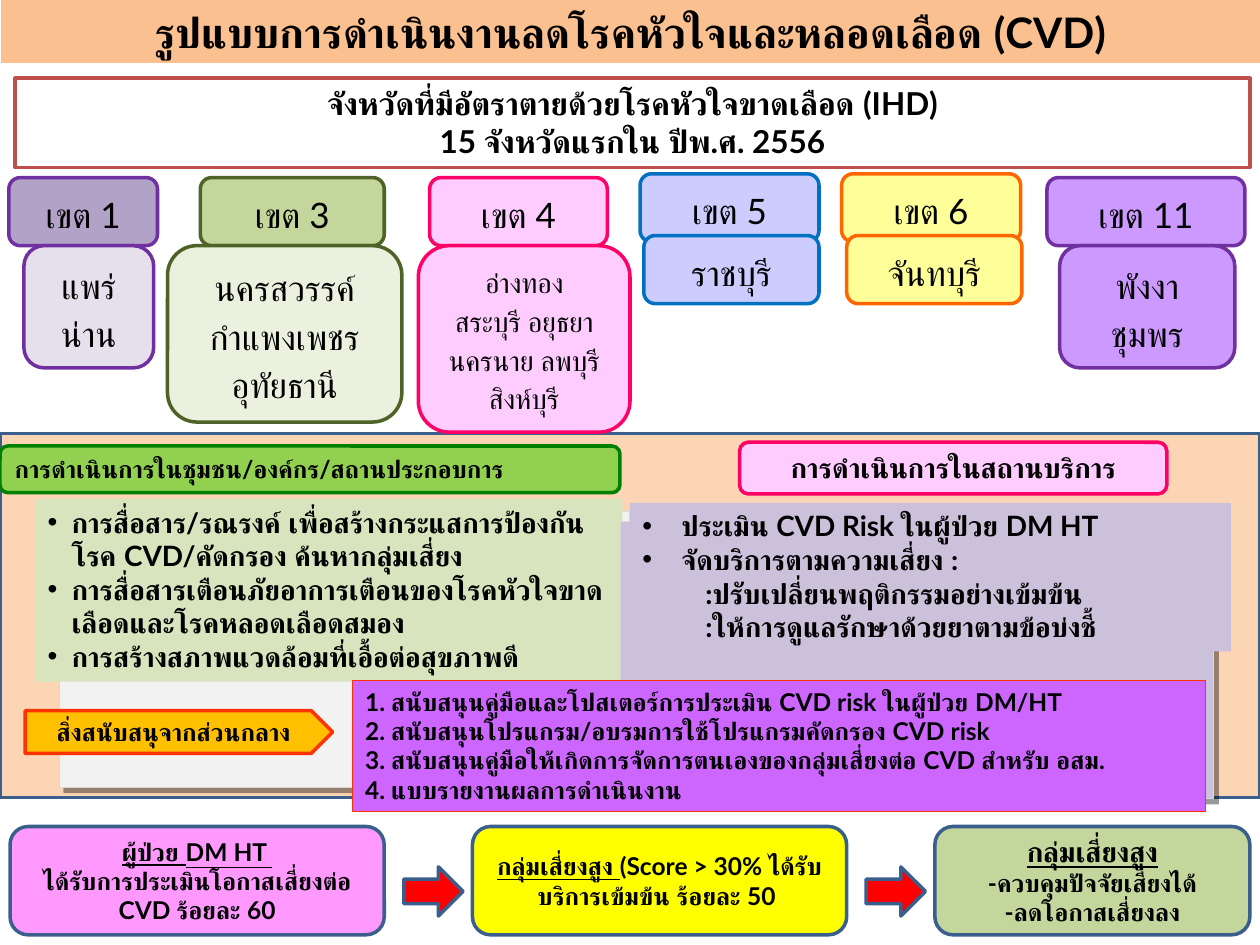
from lxml.etree import SubElement
from pptx import Presentation
from pptx.dml.color import RGBColor
from pptx.enum.shapes import MSO_SHAPE
from pptx.enum.text import MSO_ANCHOR, MSO_AUTO_SIZE, PP_ALIGN
from pptx.oxml.ns import qn
from pptx.util import Inches, Pt

COLUMNS, ROWS = 100, 75
BLACK, NAVY, GREY = "000000", "3A5F8C", "D9D9D9"
UNDERLINED = {"underline": True}


def color(value):
    return RGBColor.from_string(value)


class SlideBuilder:
    font_name = "Lato"

    def __init__(self, presentation):
        self.slide = presentation.slides.add_slide(presentation.slide_layouts[6])
        self.column = presentation.slide_width / COLUMNS
        self.row = presentation.slide_height / ROWS

    def box(self, place, fill, line=None, weight=2, kind=MSO_SHAPE.RECTANGLE):
        left, top, width, height = place
        shape = self.slide.shapes.add_shape(
            kind, round(left * self.column), round(top * self.row),
            round(width * self.column), round(height * self.row))
        shape.shadow.inherit = False
        shape.fill.solid()
        shape.fill.fore_color.rgb = color(fill)
        if line:
            shape.line.color.rgb = color(line)
            shape.line.width = Pt(weight)
        else:
            shape.line.fill.background()
        return shape

    def rounded(self, place, fill, line):
        return self.box(place, fill, line, kind=MSO_SHAPE.ROUNDED_RECTANGLE)

    def panel(self, place, fill):
        shape = self.box(place, fill, GREY, 0.75)
        effects = shape._element.spPr.find(qn("a:effectLst"))
        shadow = SubElement(effects, qn("a:outerShdw"), blurRad="0", dist=str(Pt(4)),
                            dir="2700000", algn="tl", rotWithShape="0")
        shade = SubElement(shadow, qn("a:srgbClr"), val=BLACK)
        SubElement(shade, qn("a:alpha"), val="40000")

    def text(self, shape, paragraphs, size, bold=True, align=PP_ALIGN.CENTER,
             spacing=None, grow=True):
        frame = shape.text_frame
        settings = {
            "word_wrap": True,
            "vertical_anchor": MSO_ANCHOR.TOP if grow else MSO_ANCHOR.MIDDLE,
            "auto_size": MSO_AUTO_SIZE.SHAPE_TO_FIT_TEXT if grow else MSO_AUTO_SIZE.NONE,
        }
        for name, value in settings.items():
            setattr(frame, name, value)
        for index, runs in enumerate(paragraphs):
            paragraph = frame.add_paragraph() if index else frame.paragraphs[0]
            paragraph.alignment = align
            if spacing:
                paragraph.line_spacing = spacing
            for words, changes in [(runs, {})] if isinstance(runs, str) else runs:
                run = paragraph.add_run()
                run.text = words
                run.font.color.rgb = color(BLACK)
                style = {"name": self.font_name, "size": Pt(size), "bold": bold, **changes}
                for name, value in style.items():
                    setattr(run.font, name, value)

    def bullets(self, shape, items, hang, details=()):
        self.text(shape, [*items, *details], 16, align=PP_ALIGN.LEFT)
        for index, paragraph in enumerate(shape.text_frame.paragraphs):
            detail = index >= len(items)
            paragraph.level = int(detail)
            properties = paragraph._p.get_or_add_pPr()
            properties.set("marL", str(Inches(hang + 0.5 * detail)))
            properties.set("indent", str(Inches(-hang)))
            if detail:
                SubElement(properties, qn("a:buNone"))
            else:
                SubElement(properties, qn("a:buFont"), typeface="Arial")
                SubElement(properties, qn("a:buChar"), char="•")


ZONES = [
    ("เขต 1", (0.7, 14.1, 11.8, 5.4), "B3A2C7", "7030A0",
     ["แพร่", "น่าน"], (1.9, 19.5, 10.3, 9.7), "E6E0EC", 20),
    ("เขต 3", (15.9, 14.1, 14.6, 5.4), "C3D69B", "4F6228",
     ["นครสวรรค์", "กำแพงเพชร", "อุทัยธานี"], (13.3, 19.5, 18.6, 14), "EBF1DE", 20),
    ("เขต 4", (34.1, 14.1, 14.1, 5.4), "FFCCFF", "FF0066",
     ["อ่างทอง", "สระบุรี อยุธยา", "นครนาย ลพบุรี สิงห์บุรี"],
     (33.2, 19.5, 16.8, 14.8), "FFCCFF", 16),
    ("เขต 5", (50.8, 13.8, 14.2, 5.4), "CCCCFF", "0070C0",
     ["ราชบุรี"], (51.1, 18.7, 13.9, 5.4), "CCCCFF", 20),
    ("เขต 6", (66.8, 13.8, 14.2, 5.4), "FFFF99", "FF6600",
     ["จันทบุรี"], (67.2, 18.7, 13.9, 5.4), "FFFF99", 20),
    ("เขต 11", (83.1, 14.1, 15.7, 5.4), "CC99FF", "7030A0",
     ["พังงา", "ชุมพร"], (84.1, 19.5, 13.9, 9.7), "CC99FF", 20),
]

OUTCOMES = [
    (0.8, 29.7, "FF99FF",
     [[("ผู้ป่วย DM HT ", UNDERLINED)], "ได้รับการประเมินโอกาสเสี่ยงต่อ CVD ร้อยละ 60"]),
    (37.5, 29.7, "FFFF00",
     [[("กลุ่มเสี่ยงสูง ", UNDERLINED), ("(Score > 30% ได้รับบริการเข้มข้น ร้อยละ 50 ", {})]]),
    (74.2, 25, "C3D69B",
     [[("กลุ่มเสี่ยงสูง", {"underline": True, "size": Pt(16)})],
      "-ควบคุมปัจจัยเสี่ยงได้", "-ลดโอกาสเสี่ยงลง"]),
]


def main():
    presentation = Presentation()
    presentation.slide_width, presentation.slide_height = Inches(10), Inches(7.5)
    builder = SlideBuilder(presentation)

    builder.box((0, 34.4, 100, 28.9), "FCD5B5", NAVY)
    title = builder.box((0.1, 0, 99.9, 5), "FAC090")
    builder.text(title, ["รูปแบบการดำเนินงานลดโรคหัวใจและหลอดเลือด (CVD)"], 24)
    subtitle = builder.box((1.2, 6.2, 98, 7.1), "FFFFFF", "C0504D")
    builder.text(subtitle, ["จังหวัดที่มีอัตราตายด้วยโรคหัวใจขาดเลือด (IHD)",
                            "15 จังหวัดแรกใน ปีพ.ศ. 2556"], 18)

    for zone, header, fill, line, provinces, body, pale, size in ZONES:
        builder.text(builder.rounded(header, fill, line), [zone], 20, False, spacing=1.15)
        builder.text(builder.rounded(body, pale, line), provinces, size, False, spacing=1.15)

    builder.panel((4.7, 40.6, 45.3, 21.9), "F2F2F2")
    community = builder.box((2.8, 39.6, 46.6, 14.5), "D7E4BD")
    builder.bullets(community, [
        "การสื่อสาร/รณรงค์ เพื่อสร้างกระแสการป้องกันโรค CVD/คัดกรอง ค้นหากลุ่มเสี่ยง",
        "การสื่อสารเตือนภัยอาการเตือนของโรคหัวใจขาดเลือดและโรคหลอดเลือดสมอง",
        "การสร้างสภาพแวดล้อมที่เอื้อต่อสุขภาพดี"], 0.19)
    builder.panel((49.2, 41.4, 47.1, 22), "CCC1DA")
    service = builder.box((50, 39.9, 47.7, 11.8), "CCC1DA")
    builder.bullets(service, ["ประเมิน CVD Risk ในผู้ป่วย DM HT", "จัดบริการตามความเสี่ยง :"], 0.31,
                    [":ปรับเปลี่ยนพฤติกรรมอย่างเข้มข้น", ":ให้การดูแลรักษาด้วยยาตามข้อบ่งชี้"])

    community_header = builder.rounded((0, 35.4, 49.2, 3.7), "92D050", "008000")
    builder.text(community_header, ["การดำเนินการในชุมชน/องค์กร/สถานประกอบการ"], 14,
                 align=PP_ALIGN.LEFT)
    service_header = builder.rounded((58.7, 35.1, 33.9, 4.1), "FFCCFF", "FF0066")
    builder.text(service_header, ["การดำเนินการในสถานบริการ"], 16)

    for left, width, fill, paragraphs in OUTCOMES:
        outcome = builder.rounded((left, 65.6, width, 8.6), fill, NAVY)
        builder.text(outcome, paragraphs, 14, grow=False)
    for left, *_ in OUTCOMES[1:]:
        builder.box((left - 5.45, 68.8, 4.7, 3.9), "FF0000", NAVY, kind=MSO_SHAPE.RIGHT_ARROW)

    support = builder.box((28, 54, 67.7, 10.4), "CC66FF", "FF3300", 0.75)
    builder.text(support, [
        "1. สนับสนุนคู่มือและโปสเตอร์การประเมิน CVD risk ในผู้ป่วย DM/HT",
        "2. สนับสนุนโปรแกรม/อบรมการใช้โปรแกรมคัดกรอง CVD risk",
        "3. สนับสนุนคู่มือให้เกิดการจัดการตนเองของกลุ่มเสี่ยงต่อ CVD สำหรับ อสม.",
        "4. แบบรายงานผลการดำเนินงาน"], 14, align=PP_ALIGN.LEFT)
    support_label = builder.box((2, 56.4, 24.4, 3.4), "FFC000", "FF3300", kind=MSO_SHAPE.PENTAGON)
    builder.text(support_label, ["สิ่งสนับสนุจากส่วนกลาง"], 14)

    presentation.save("out.pptx")


if __name__ == "__main__":
    main()
